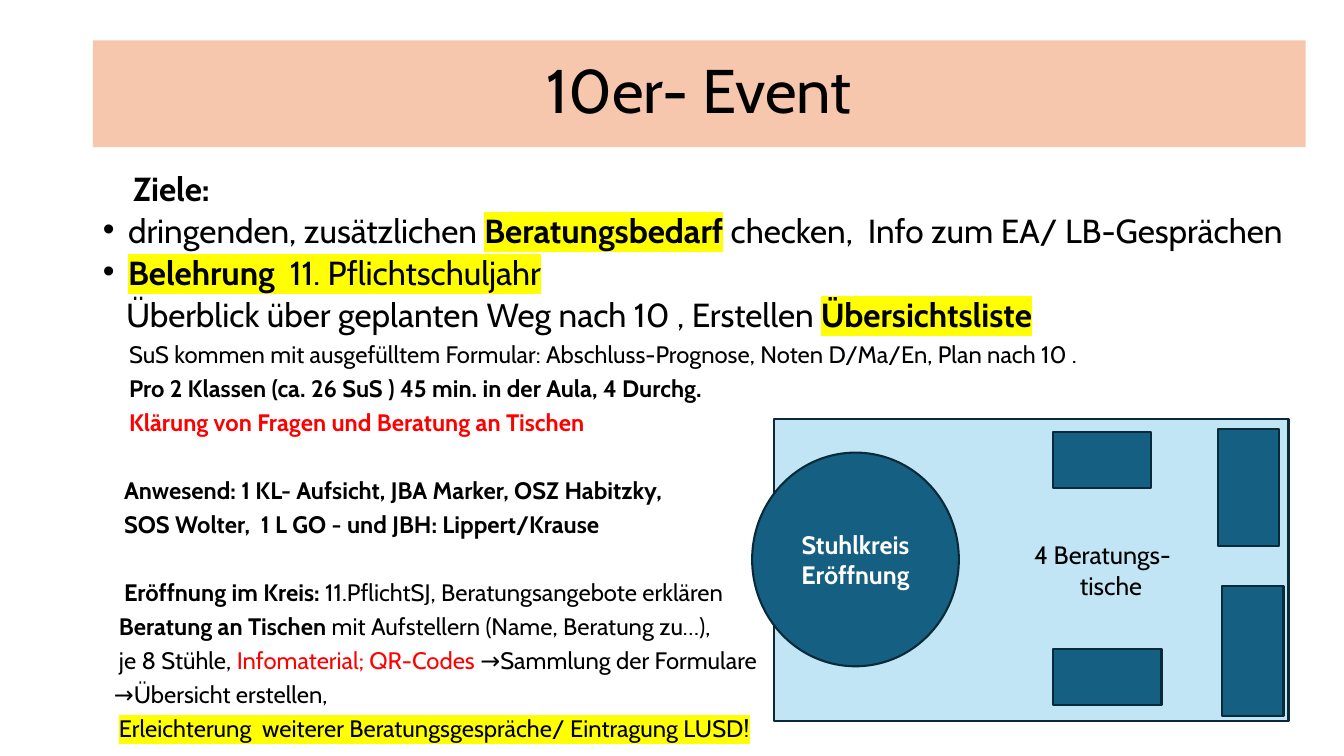
from lxml import etree
from pptx import Presentation
from pptx import util as u
from pptx.dml import color as dml
from pptx.enum import shapes, text
from pptx.oxml import ns

PX = 9144
COLOURS = {"black": "000000", "white": "FFFFFF", "red": "FF0000", "marker": "FFFF00",
           "peach": "F6C6AD", "sky": "C1E5F5", "teal": "156082", "outline": "092A39"}
LARGE, SMALL = 23.8, 17
BULLET_INDENT = 25
BLANK_LINE = 24.3

GOALS = [
    (LARGE, 30, False, 0, [("Ziele:", "bold")]),
    (LARGE, BULLET_INDENT, True, 10, [
        ("dringenden, zusätzlichen ", ""), ("Beratungsbedarf", "bold marked"),
        (" checken,  Info zum EA/ LB-Gesprächen", "")]),
    (LARGE, BULLET_INDENT, True, 10, [
        ("Belehrung", "bold marked"), ("  11. Pflichtschuljahr", "marked")]),
    (LARGE, 23, False, 10, [
        ("Überblick über geplanten Weg nach 10 , Erstellen ", ""),
        ("Übersichtsliste", "bold marked")]),
    (SMALL, 26, False, 10, [
        ("SuS kommen mit ausgefülltem Formular: Abschluss-Prognose, Noten D/Ma/En, Plan nach 10 .", "")]),
    (SMALL, 26, False, 10, [
        ("Pro 2 Klassen (ca. 26 SuS ) 45 min. in der Aula, 4 Durchg.", "bold")]),
    (SMALL, 26, False, 10, [("Klärung von Fragen und Beratung an Tischen", "bold red")]),
    (SMALL, 21, False, 10 + BLANK_LINE, [
        ("Anwesend: 1 KL- Aufsicht, JBA Marker, OSZ Habitzky,", "bold")]),
    (SMALL, 21, False, 10, [("SOS Wolter,  1 L GO - und JBH: Lippert/Krause", "bold")]),
    (SMALL, 21, False, 10 + BLANK_LINE, [
        ("Eröffnung im Kreis: ", "bold"), ("11.PflichtSJ, Beratungsangebote erklären", "")]),
    (SMALL, 16, False, 10, [
        ("Beratung an Tischen ", "bold"), ("mit Aufstellern (Name, Beratung zu…),", "")]),
    (SMALL, 16, False, 10, [
        ("je 8 Stühle,", ""), (" Infomaterial; QR-Codes ", "red"),
        ("→Sammlung der Formulare", "")]),
    (SMALL, 11, False, 10, [("→Übersicht erstellen,", "")]),
    (SMALL, 16, False, 10, [
        ("Erleichterung  weiterer Beratungsgespräche/ Eintragung LUSD!", "marked")]),
]
TABLES = [(1044, 429, 98, 55), (1044, 644, 108, 55), (1208, 426, 61, 116), (1212, 581, 61, 129)]


def rgb(name):
    return dml.RGBColor.from_string(COLOURS[name])


class RoomSlide:
    font = "Cabin"

    def __init__(self, slide):
        self.slide = slide

    def place(self, shape, box):
        shape.left, shape.top, shape.width, shape.height = [length * PX for length in box]

    def format_run(self, run, size, colour, bold=False, marked=False):
        run.font.name = self.font
        run.font.size = u.Pt(size)
        run.font.bold = bold
        run.font.color.rgb = rgb(colour)
        if marked:
            highlight = etree.Element(ns.qn("a:highlight"))
            etree.SubElement(highlight, ns.qn("a:srgbClr"), val=COLOURS["marker"])
            run.font._element.find(ns.qn("a:solidFill")).addnext(highlight)

    def indent(self, paragraph, left, hanging=0):
        properties = paragraph._p.get_or_add_pPr()
        properties.set("marL", str(left * PX))
        properties.set("indent", str(-hanging * PX))
        return properties

    def title(self, wording, box):
        shape = self.slide.shapes.title
        self.place(shape, box)
        shape.fill.solid()
        shape.fill.fore_color.rgb = rgb("peach")
        frame = shape.text_frame
        frame.text = wording
        frame.auto_size = text.MSO_AUTO_SIZE.NONE
        frame.vertical_anchor = text.MSO_ANCHOR.MIDDLE
        paragraph = frame.paragraphs[0]
        paragraph.alignment = text.PP_ALIGN.CENTER
        paragraph.line_spacing = 0.9
        self.format_run(paragraph.runs[0], 44, "black")

    def body(self, rows, box):
        shape = self.slide.placeholders[1]
        self.place(shape, box)
        frame = shape.text_frame
        frame.auto_size = text.MSO_AUTO_SIZE.NONE
        frame.vertical_anchor = text.MSO_ANCHOR.TOP
        frame.word_wrap = True
        for number, (size, left, bulleted, before, pieces) in enumerate(rows):
            paragraph = frame.add_paragraph() if number else frame.paragraphs[0]
            properties = self.indent(paragraph, left, left if bulleted else 0)
            if bulleted:
                etree.SubElement(properties, ns.qn("a:buFont"), typeface="Arial")
                etree.SubElement(properties, ns.qn("a:buChar"), char="•")
            else:
                etree.SubElement(properties, ns.qn("a:buNone"))
            paragraph.alignment = text.PP_ALIGN.LEFT
            paragraph.line_spacing = 0.7
            paragraph.space_before = u.Pt(before)
            for wording, style in pieces:
                run = paragraph.add_run()
                run.text = wording
                self.format_run(run, size, "red" if "red" in style else "black",
                                "bold" in style, "marked" in style)

    def block(self, kind, box, fill, lines=(), colour="white", bold=False):
        shape = self.slide.shapes.add_shape(kind, *[length * PX for length in box])
        shape.shadow.inherit = False
        shape.fill.solid()
        shape.fill.fore_color.rgb = rgb(fill)
        shape.line.color.rgb = rgb("outline")
        shape.line.width = u.Pt(1.5)
        frame = shape.text_frame
        frame.vertical_anchor = text.MSO_ANCHOR.MIDDLE
        for number, (wording, left) in enumerate(lines):
            paragraph = frame.add_paragraph() if number else frame.paragraphs[0]
            paragraph.text = wording
            paragraph.alignment = text.PP_ALIGN.CENTER
            self.indent(paragraph, left)
            self.format_run(paragraph.runs[0], 18, colour, bold)


def main():
    presentation = Presentation()
    presentation.slide_width, presentation.slide_height = 1333 * PX, 750 * PX
    slide = presentation.slides.add_slide(presentation.slide_layouts[1])
    room = RoomSlide(slide)
    room.title("10er- Event", (92, 40, 1203, 106))
    room.body(GOALS, (92, 173, 1278, 588))
    rectangle = shapes.MSO_SHAPE.RECTANGLE
    room.block(rectangle, (768, 416, 510, 299), "sky",
               [("4 Beratungs-", 141), ("tische", 158)], "black")
    room.block(shapes.MSO_SHAPE.OVAL, (746, 449, 205, 212), "teal",
               [("Stuhlkreis", 0), ("Eröffnung", 0)], bold=True)
    for box in TABLES:
        room.block(rectangle, box, "teal")
    presentation.save("out.pptx")


if __name__ == "__main__":
    main()
